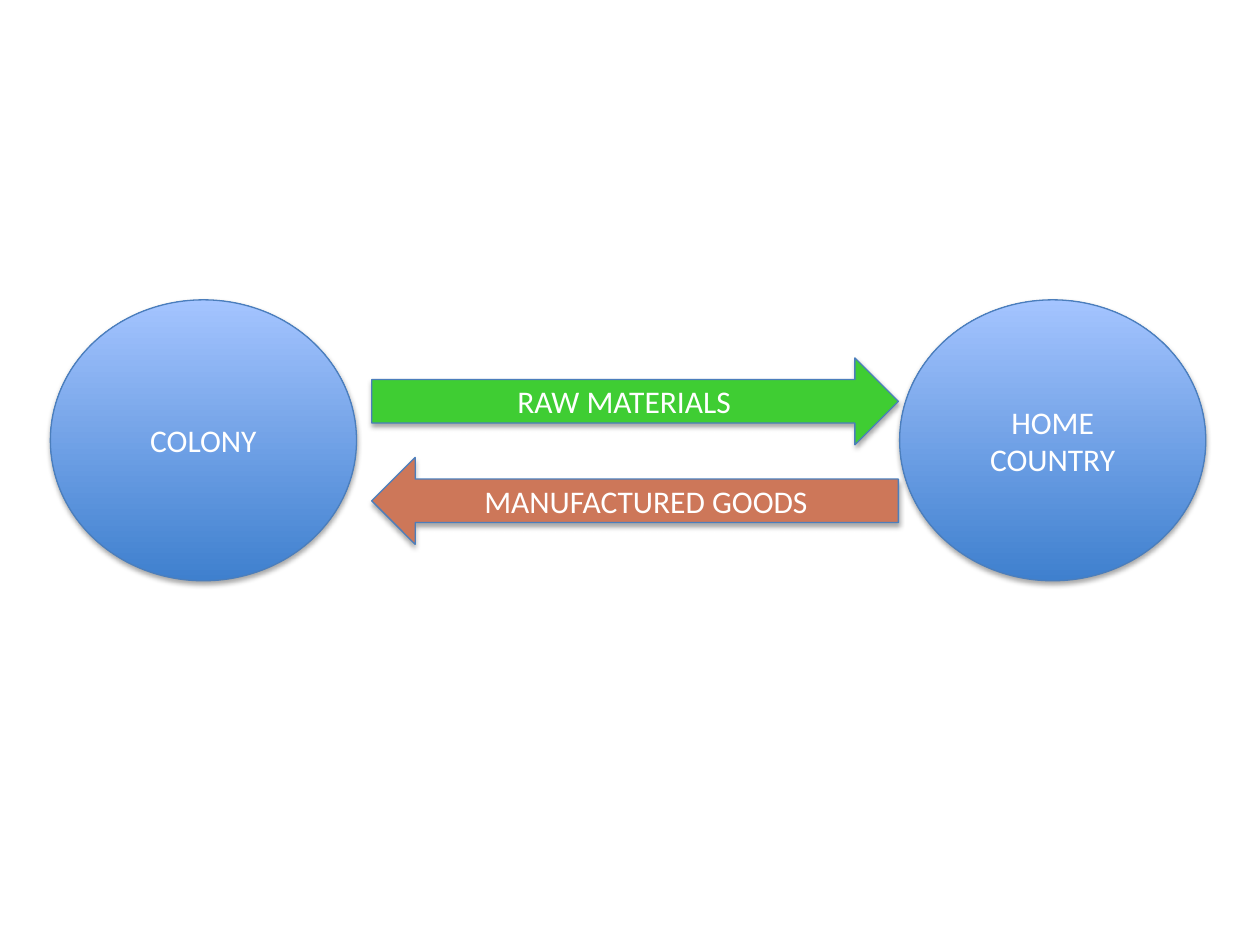
from lxml import etree
from pptx import Presentation
from pptx.dml.color import RGBColor
from pptx.enum import shapes, text
from pptx.oxml import ns
from pptx.util import Inches, Pt

WHITE = RGBColor(0xFF, 0xFF, 0xFF)
OUTLINE = RGBColor(0x4B, 0x7E, 0xBC)
DEEP_BLUE = RGBColor(0x3F, 0x80, 0xCE)
PALE_BLUE = RGBColor(0xA4, 0xC4, 0xFF)
GREEN = RGBColor(0x3F, 0xCD, 0x33)
CLAY = RGBColor(0xCD, 0x77, 0x59)
SHADOW = RGBColor(0, 0, 0)

LABEL_FONT = {"name": "Calibri", "size": Pt(18)}


def add_soft_shadow(shape):
    shape.shadow.inherit = False
    effects = shape._element.spPr.find(ns.qn("a:effectLst"))
    outer = etree.SubElement(
        effects, ns.qn("a:outerShdw"), blurRad=str(Pt(3.1)), dist=str(Pt(1.8)),
        dir="5400000", rotWithShape="0")
    color = etree.SubElement(outer, ns.qn("a:srgbClr"), val=str(SHADOW))
    etree.SubElement(color, ns.qn("a:alpha"), val="35000")


def add_labelled_shape(slide, kind, label, left, top, width, height):
    shape = slide.shapes.add_shape(
        kind, Inches(left), Inches(top), Inches(width), Inches(height))
    shape.line.color.rgb = OUTLINE
    shape.line.width = Pt(0.75)
    add_soft_shadow(shape)

    frame = shape.text_frame
    frame.word_wrap = True
    frame.vertical_anchor = text.MSO_ANCHOR.MIDDLE
    paragraph = frame.paragraphs[0]
    paragraph.alignment = text.PP_ALIGN.CENTER
    run = paragraph.add_run()
    run.text = label
    for attribute, value in LABEL_FONT.items():
        setattr(run.font, attribute, value)
    run.font.color.rgb = WHITE
    return shape


def add_territory(slide, label, left):
    territory = add_labelled_shape(
        slide, shapes.MSO_SHAPE.OVAL, label, left, 2.38, 2.43, 2.23)
    territory.fill.gradient()
    territory.fill.gradient_angle = 90  # deep blue at the bottom
    for stop, color in zip(territory.fill.gradient_stops, (DEEP_BLUE, PALE_BLUE)):
        stop.color.rgb = color


def add_trade_flow(slide, kind, label, top, color):
    flow = add_labelled_shape(slide, kind, label, 2.95, top, 4.18, 0.69)
    flow.fill.solid()
    flow.fill.fore_color.rgb = color


def main():
    prs = Presentation()
    prs.slide_width, prs.slide_height = Inches(10), Inches(7.5)
    slide = prs.slides.add_slide(prs.slide_layouts[6])

    # Trading partners
    add_territory(slide, "COLONY", 0.4)
    add_territory(slide, "HOME COUNTRY", 7.14)

    # Goods exchanged between them
    add_trade_flow(slide, shapes.MSO_SHAPE.RIGHT_ARROW, "RAW MATERIALS", 2.84, GREEN)
    add_trade_flow(slide, shapes.MSO_SHAPE.LEFT_ARROW, "MANUFACTURED GOODS", 3.63, CLAY)

    prs.save("out.pptx")


if __name__ == "__main__":
    main()
